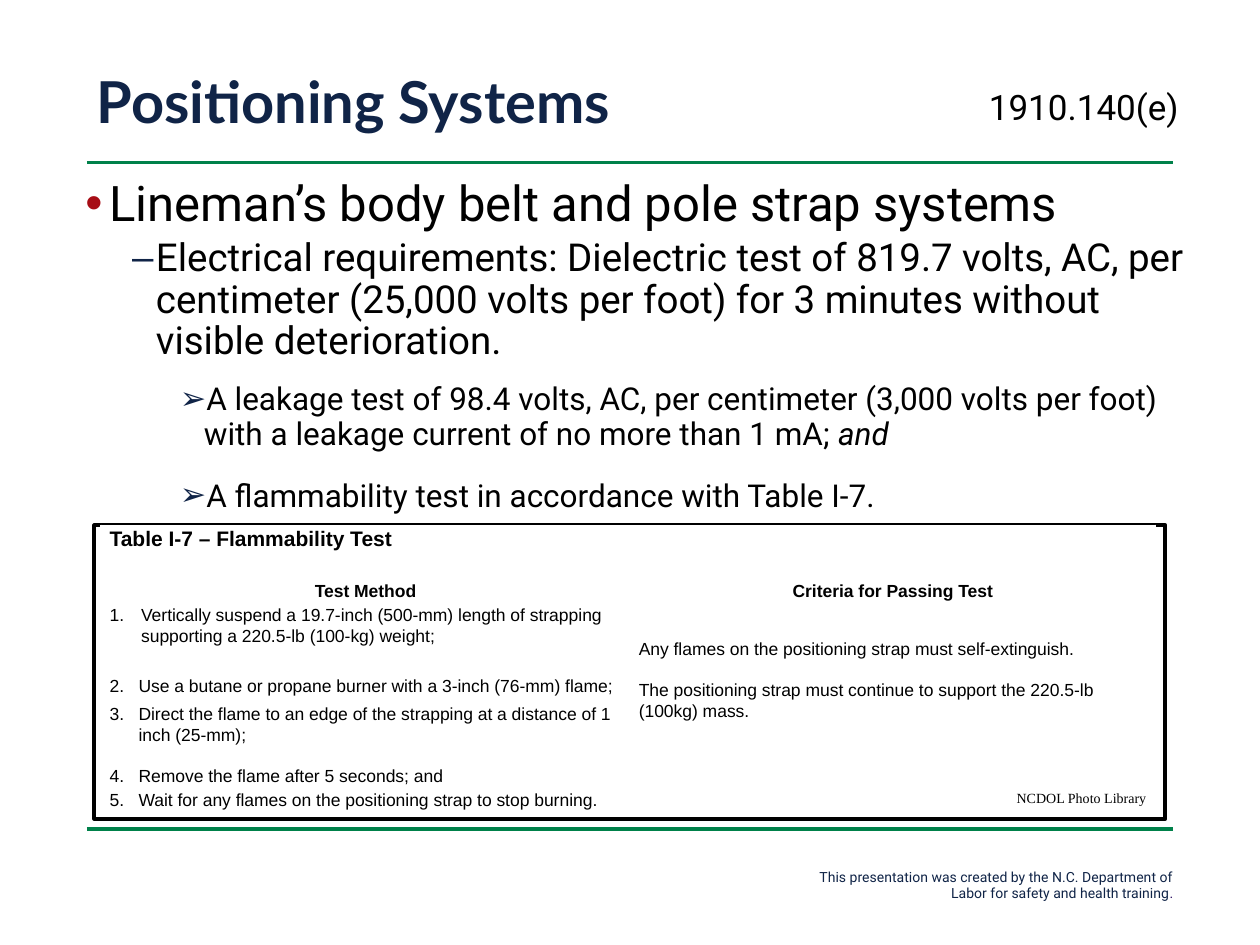
import pptx
import pptx.dml.color
import pptx.enum.shapes
import pptx.enum.text
import pptx.oxml
import pptx.oxml.ns
import pptx.util

RGB = pptx.dml.color.RGBColor
ALIGN = pptx.enum.text.PP_ALIGN
ANCHOR = pptx.enum.text.MSO_ANCHOR
Pt = pptx.util.Pt

GREEN = RGB(0x00, 0x81, 0x4A)
NAVY = RGB(0x10, 0x24, 0x47)
PURPLE = RGB(0x2B, 0x0E, 0x62)
RED = RGB(0xA7, 0x0D, 0x15)
BLACK = RGB(0, 0, 0)
WHITE = RGB(255, 255, 255)

SCALE = 9144  # EMU per px, 100 px to the inch


def px(num):
    return pptx.util.Emu(num * SCALE)


def node(xml):
    space = pptx.oxml.ns.nsdecls("a")
    return pptx.oxml.parse_xml(xml.replace(" ", f" {space} ", 1))


def mark(para, bullet, color, left, hang):
    """Give a paragraph a bullet character, or a number if bullet is an int."""
    props = para._p.get_or_add_pPr()
    props.set("marL", str(px(left)))
    props.set("indent", str(px(-hang)))
    if color is not None:
        props.append(node(f'<a:buClr ><a:srgbClr val="{color}"/></a:buClr>'))
    props.append(node('<a:buFont typeface="Arial"/>'))
    if isinstance(bullet, int):
        props.append(node(
            f'<a:buAutoNum type="arabicPeriod" startAt="{bullet}"/>'))
    else:
        props.append(node(f'<a:buChar char="{bullet}"/>'))


def write(frame, text, font="Arial", size=10, color=BLACK, bold=False,
          align=ALIGN.LEFT, line=1.0, before=0, bullet=None, tint=None,
          left=0, hang=0, tail="", slant=False, shade=None):
    """Add a paragraph; tail is a last run with its own slant and shade."""
    para = frame.paragraphs[0]
    if para.runs:
        para = frame.add_paragraph()
    if bullet is not None:
        mark(para, bullet, tint, left, hang)
    para.alignment = align
    para.line_spacing = line
    para.space_before = Pt(before)
    parts = [(text, False, color), (tail, slant, shade or color)]
    for words, lean, hue in parts:
        if words:
            run = para.add_run()
            run.text = words
            run.font.name = font
            run.font.size = Pt(size)
            run.font.bold = bold
            run.font.italic = lean
            run.font.color.rgb = hue


def frame(slide, box, wrap=True, anchor=ANCHOR.TOP):
    text = slide.shapes.add_textbox(*map(px, box)).text_frame
    text.word_wrap = wrap
    text.vertical_anchor = anchor
    return text


def rule(slide, left, top, width):
    line = slide.shapes.add_connector(
        pptx.enum.shapes.MSO_CONNECTOR.STRAIGHT,
        px(left), px(top), px(left + width), px(top))
    line.line.color.rgb = GREEN
    line.line.width = Pt(2)
    line._element.spPr.append(node("<a:effectLst />"))


def header(slide, left, top, width):
    title = frame(slide, (left, top, width, 60), anchor=ANCHOR.MIDDLE)
    write(title, "Positioning Systems", font="Lato", size=33, color=NAVY,
          bold=True, line=0.9)
    code = frame(slide, (left + 708, top + 14, 183, 42))
    write(code, "1910.140(e)", font="Roboto", size=20, line=0.9)


def body(slide, box):
    text = frame(slide, box)
    look = dict(font="Roboto", line=0.9, hang=19)
    third = dict(look, size=18, bullet="➢", tint=NAVY, left=94)
    write(text, "Lineman’s body belt and pole strap systems",
          size=28, bullet="•", tint=RED, left=19, **look)
    write(text, "Electrical requirements: Dielectric test of 819.7 volts, AC, "
          "per centimeter (25,000 volts per foot) for 3 minutes without "
          "visible deterioration.",
          size=22, bullet="–", tint=NAVY, left=56, before=3.8, **look)
    write(text, "A leakage test of 98.4 volts, AC, per centimeter (3,000 volts "
          "per foot) with a leakage current of no more than 1 mA; ",
          tail="and", slant=True, before=11.8, **third)
    write(text, "A flammability test in accordance with Table I-7.",
          before=16, **third)


def edge(cell, sides, width):
    """Draw white borders, in the order l, r, t, b, ahead of the fill."""
    props = cell._tc.get_or_add_tcPr()
    for spot, side in enumerate(sides):
        props.insert(spot, node(
            f'<a:ln{side} w="{Pt(width)}"><a:solidFill>'
            f'<a:srgbClr val="{WHITE}"/></a:solidFill></a:ln{side}>'))


STEPS = [
    "Vertically suspend a 19.7-inch (500-mm) length of strapping supporting "
    "a 220.5-lb (100-kg) weight;",
    "Use a butane or propane burner with a 3-inch (76-mm) flame;",
    "Direct the flame to an edge of the strapping at a distance of 1 "
    "inch (25-mm);",
    "Remove the flame after 5 seconds; and",
    "Wait for any flames on the positioning strap to stop burning.",
]
PASS = [
    "Any flames on the positioning strap must self-extinguish.",
    "The positioning strap must continue to support the 220.5-lb "
    "(100kg) mass.",
]
ROWS = [44, 19, 56, 19, 51, 19, 19]
COLS = [420, 417]


def grid(slide, left, top):
    table = slide.shapes.add_table(
        len(ROWS), len(COLS), px(left), px(top),
        px(sum(COLS)), px(sum(ROWS))).table
    table.first_row = table.horz_banding = False
    for col, width in zip(table.columns, COLS):
        col.width = px(width)
    for row, high in zip(table.rows, ROWS):
        row.height = px(high)
    for cell in table.iter_cells():
        cell.fill.solid()
        cell.fill.fore_color.rgb = WHITE
        cell.margin_left = cell.margin_right = px(7)
        cell.margin_top = cell.margin_bottom = 0
        edge(cell, "LRTB", 1)
    table.cell(0, 0).merge(table.cell(0, 1))
    table.cell(2, 1).merge(table.cell(6, 1))

    write(table.cell(0, 0).text_frame, "Table I-7 – Flammability Test",
          size=12, bold=True, line=1.07)
    for col, head in enumerate(["Test Method", "Criteria for Passing Test"]):
        write(table.cell(1, col).text_frame, head, bold=True,
              align=ALIGN.CENTER, line=1.07)
    for num, step in enumerate(STEPS, 1):
        cell = table.cell(num + 1, 0)
        inset = 25 if num == 1 else 23
        write(cell.text_frame, step, line=1.07, bullet=num,
              left=inset, hang=inset)
        if num > 2:
            cell.vertical_anchor = ANCHOR.MIDDLE
    table.cell(4, 0).margin_bottom = px(11)
    goal = table.cell(2, 1)
    goal.margin_top = px(27)
    for num, rest in enumerate(PASS):
        write(goal.text_frame, rest, line=1.07, before=11.5 * num)


def panel(slide, left, top, width, height):
    """Framed flammability table."""
    card = slide.shapes.add_shape(
        pptx.enum.shapes.MSO_SHAPE.RECTANGLE,
        *map(px, (left, top, width, height)))
    card.shadow.inherit = False
    card.fill.solid()
    card.fill.fore_color.rgb = WHITE
    card.line.color.rgb = BLACK
    card.line.width = Pt(2.25)
    grid(slide, left + 5, top)


def credit(slide, box):
    write(frame(slide, box, wrap=False), "NCDOL Photo Library",
          font="Times New Roman", size=8)


def footer(slide, box):
    write(frame(slide, box), "This presentation was created by the N.C. "
          "Department of Labor for safety and health training",
          font="Roboto", size=8, color=NAVY, align=ALIGN.RIGHT,
          tail=".", shade=PURPLE)


def main():
    deck = pptx.Presentation()
    deck.slide_width, deck.slide_height = px(1000), px(750)
    slide = deck.slides.add_slide(deck.slide_layouts[6])
    for top in (129, 658):
        rule(slide, 69, top, 862)
    footer(slide, (616, 684, 325, 37))
    panel(slide, 75, 417, 850, 233)
    header(slide, 67, 53, 867)
    body(slide, (58, 137, 900, 505))
    credit(slide, (797, 622, 124, 23))
    deck.save("out.pptx")


if __name__ == "__main__":
    main()
